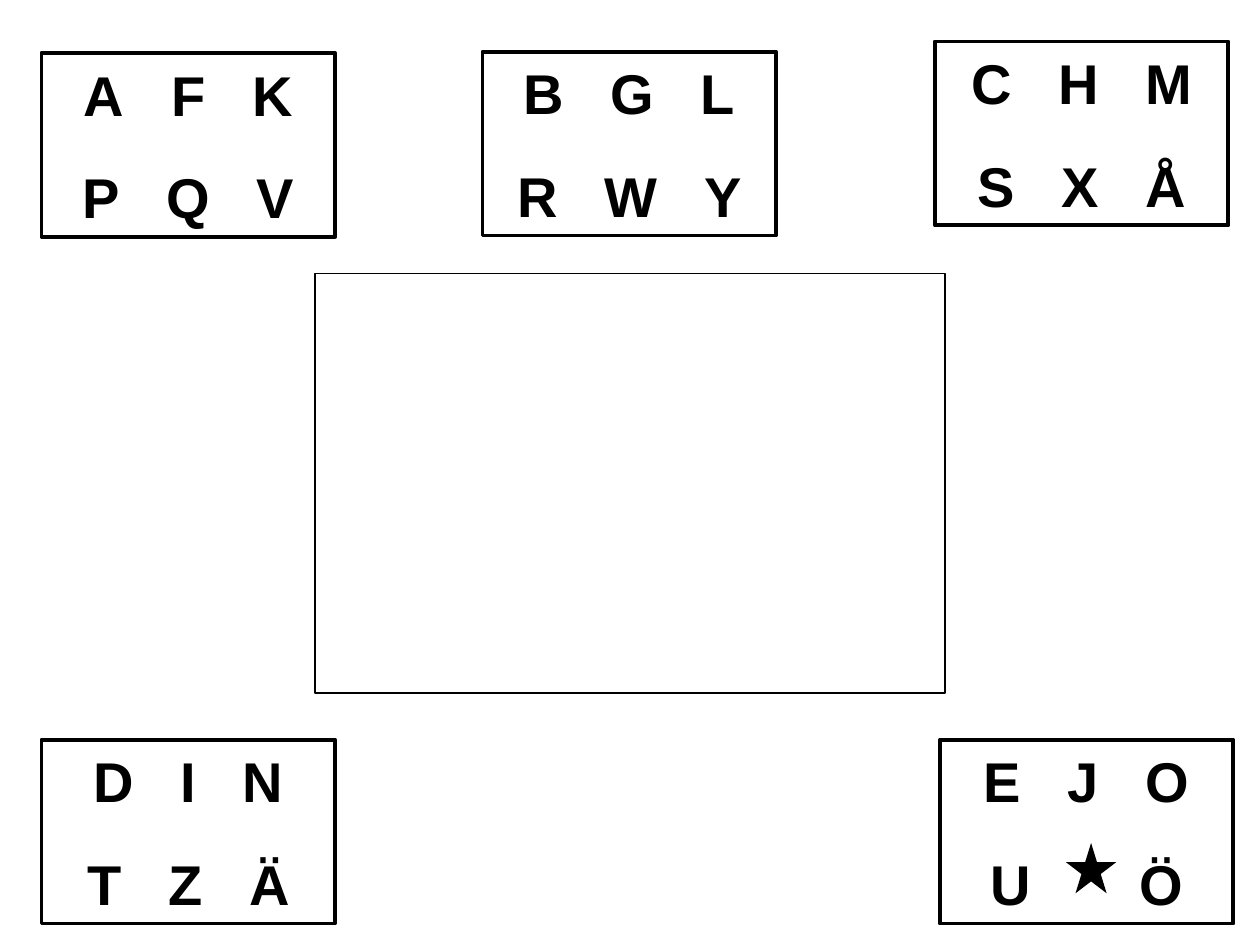
from pptx import Presentation
from pptx.dml.color import RGBColor
from pptx.enum.shapes import MSO_SHAPE as Shape
from pptx.enum.text import MSO_ANCHOR as Anchor, PP_ALIGN as Align
from pptx.util import Inches, Pt

CARD_WIDTH, CARD_HEIGHT = 2.33, 1.46
LETTER_SIZE = 32
SPACE_WIDTH = 0.278 * LETTER_SIZE  # width of an Arial space, in points


def colour(value):
    return RGBColor.from_string(value)


def add_text(para, text, size=LETTER_SIZE, bold=True, ink="000000", font="Arial", spacing=0):
    span = para.add_run()
    span.text = text
    span.font.size = Pt(size)
    span.font.bold = bold
    span.font.name = font
    span.font.color.rgb = colour(ink)
    if spacing:
        span.font._element.set("spc", str(round(spacing * 100)))


class Board:
    """Holds the style and the current slide."""

    ink = "000000"

    def __init__(self, page):
        self.page = page

    def frame(self, left, top, width, height, weight):
        box = self.page.shapes.add_shape(
            Shape.RECTANGLE, Inches(left), Inches(top), Inches(width), Inches(height))
        box.shadow.inherit = False
        box.fill.background()
        box.line.color.rgb = colour(self.ink)
        box.line.width = Pt(weight)
        return box

    def card(self, left, top, rows):
        box = self.frame(left, top, CARD_WIDTH, CARD_HEIGHT, 2.25)
        frame = box.text_frame
        frame.word_wrap = True
        frame.vertical_anchor = Anchor.MIDDLE
        for index, letters in enumerate(rows):
            para = frame.paragraphs[0] if index == 0 else frame.add_paragraph()
            para.alignment = Align.CENTER
            para.space_before = Pt(20)
            # Two letters leave room for a symbol between them
            gap = 3 if len(letters) == 3 else 7
            for position, letter in enumerate(letters):
                if position:
                    add_text(para, " ", ink=self.ink, spacing=(gap - 1) * SPACE_WIDTH)
                add_text(para, letter, ink=self.ink)

    def star(self, left, top, size):
        star = self.page.shapes.add_shape(
            Shape.STAR_5_POINT, Inches(left), Inches(top), Inches(size), Inches(size))
        star.shadow.inherit = False
        star.fill.solid()
        star.fill.fore_color.rgb = colour(self.ink)
        star.line.fill.background()


def main():
    deck = Presentation()
    deck.slide_width, deck.slide_height = Inches(10), Inches(7.5)
    board = Board(deck.slides.add_slide(deck.slide_layouts[6]))

    # Letter cards around the edge
    for left, top, rows in [
        (0.33, 0.42, ("AFK", "PQV")),
        (3.83, 0.41, ("BGL", "RWY")),
        (7.42, 0.33, ("CHM", "SXÅ")),
        (0.33, 5.87, ("DIN", "TZÄ")),
        (7.46, 5.87, ("EJO", "UÖ")),
    ]:
        board.card(left, top, rows)

    # Empty window in the middle
    board.frame(2.5, 2.17, 5, 3.33, 0.75)

    # Star on the last card
    board.star(8.46, 6.69, 0.4)

    deck.save("out.pptx")


if __name__ == "__main__":
    main()
